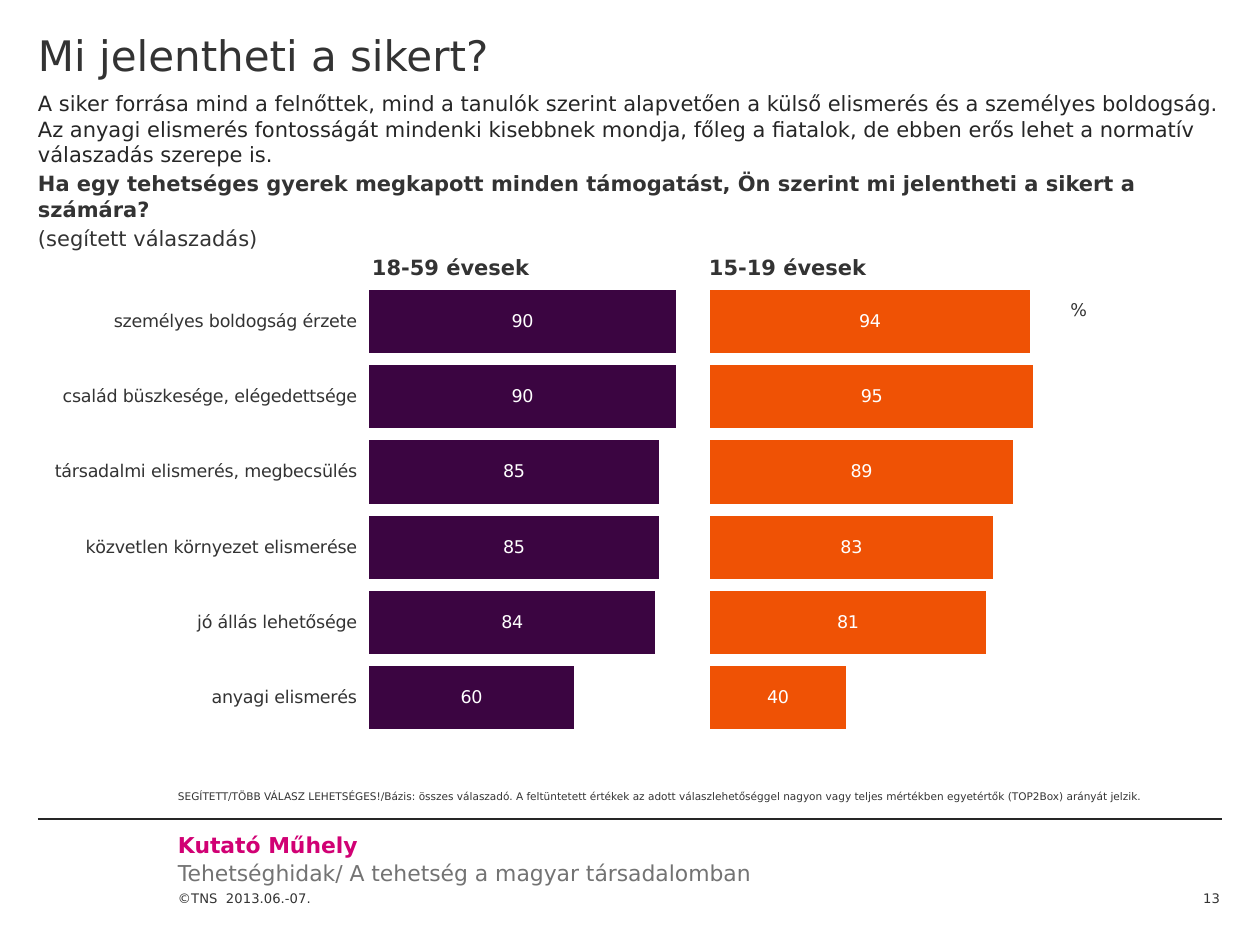
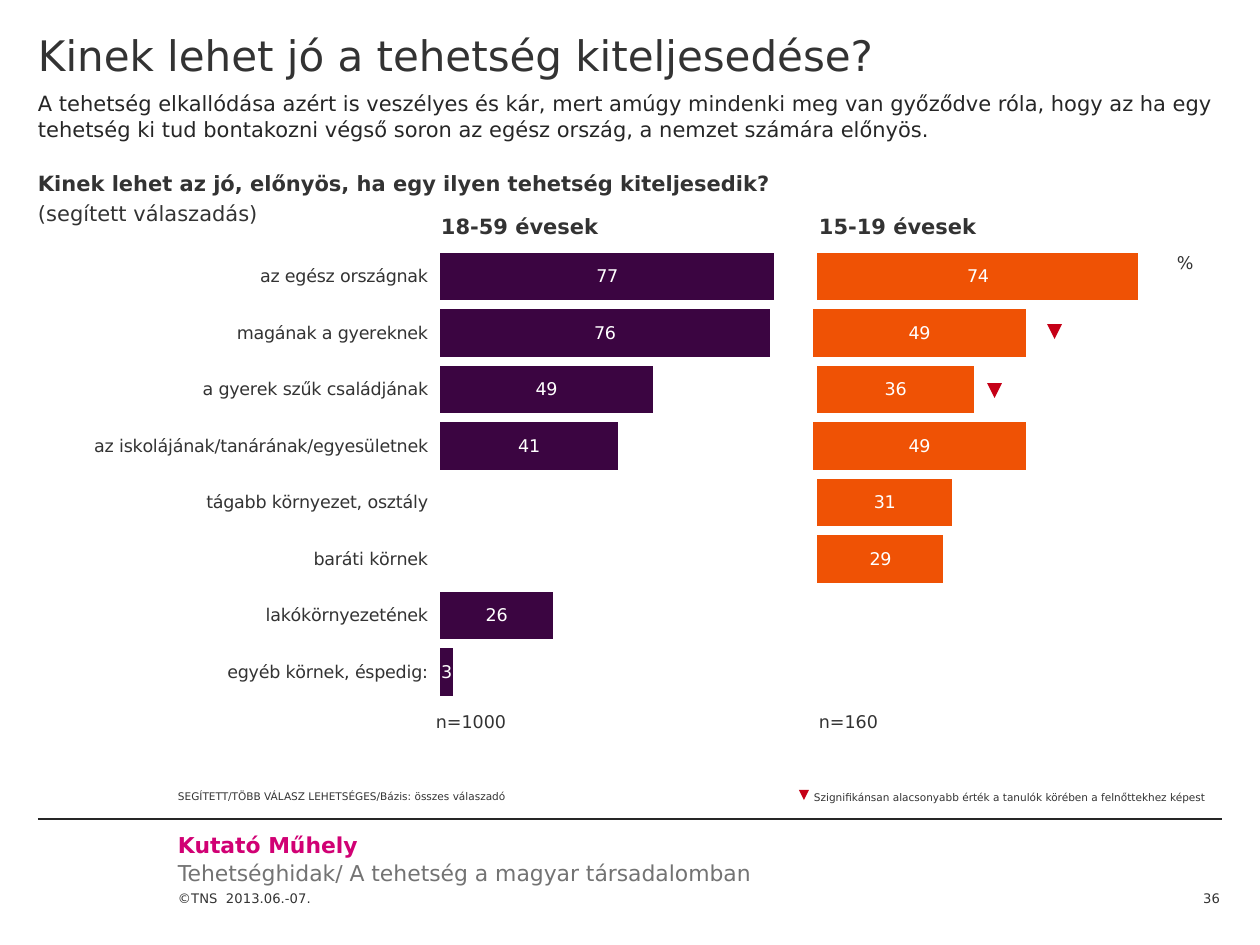
from lxml.etree import SubElement
from pptx import Presentation
from pptx.chart.data import CategoryChartData
from pptx.dml.color import RGBColor
from pptx.enum.chart import XL_CHART_TYPE, XL_LABEL_POSITION, XL_TICK_LABEL_POSITION, XL_TICK_MARK
from pptx.enum.shapes import MSO_CONNECTOR, MSO_SHAPE
from pptx.enum.text import MSO_ANCHOR, MSO_AUTO_SIZE, PP_ALIGN
from pptx.oxml import parse_xml
from pptx.oxml.ns import nsdecls, qn
from pptx.util import Emu, Pt

SCALE = 914400 / 126
FONT = "DejaVu Sans"
DARK, BLACK, GREY = "333333", "262626", "737373"
PINK, PLUM, FLAME = "D10074", "3B0541", "EF5205"
RED, WHITE = "C50017", "FFFFFF"
LEFT, INDENT, WIDTH = 38, 178, 1184
ADULTS, TEENS = "18-59 évesek", "15-19 évesek"
CHART = (LEFT, 178, 1183, 587)


def px(count):
    return Emu(round(count * SCALE))


def hue(code):
    return RGBColor.from_string(code)


def style(font, size, tone, bold=False):
    font.name = FONT
    font.size = Pt(size)
    font.bold = bold
    font.color.rgb = hue(tone)


def write(shape, text, size, tone=DARK, bold=False, low=False, align=PP_ALIGN.LEFT):
    frame = shape.text_frame
    frame.text = text
    frame.word_wrap = True
    frame.auto_size = MSO_AUTO_SIZE.NONE
    frame.vertical_anchor = MSO_ANCHOR.BOTTOM if low else MSO_ANCHOR.TOP
    frame.margin_left = frame.margin_right = frame.margin_top = frame.margin_bottom = 0
    for rank, para in enumerate(frame.paragraphs):
        para.alignment = align
        para.space_before = Pt(2.4 if rank else 0)
        for run in para.runs:
            style(run.font, size, tone, bold)
    return frame


def label(slide, box, text, size, **look):
    return write(slide.shapes.add_textbox(*map(px, box)), text, size, **look)


def hold(slide, index, box, text, size, **look):
    shape = slide.placeholders[index]
    shape.left, shape.top, shape.width, shape.height = map(px, box)
    frame = write(shape, text, size, **look)
    for para in frame.paragraphs:
        props = para._p.get_or_add_pPr()
        props.set("marL", "0")
        props.set("indent", "0")
        SubElement(props, qn("a:buNone"))
    return frame


def footer(slide, number):
    rule = slide.shapes.add_connector(
        MSO_CONNECTOR.STRAIGHT, px(LEFT), px(819), px(LEFT + WIDTH), px(819))
    rule.line.color.rgb = hue(BLACK)
    rule.line.width = Pt(0.75)
    SubElement(rule._element.spPr, qn("a:effectLst"))
    label(slide, (INDENT, 832, 650, 28), "Kutató Műhely", 12.5, tone=PINK, bold=True)
    label(slide, (INDENT, 860, 650, 28),
          "Tehetséghidak/ A tehetség a magyar társadalomban", 12.5, tone=GREY)
    label(slide, (INDENT, 886, 180, 20), "©TNS  2013.06.-07.", 7.5, low=True)
    label(slide, (1150, 886, 70, 20), number, 7.5, low=True, align=PP_ALIGN.RIGHT)


def page(deck, number, title, intro, query, note):
    slide = deck.slides.add_slide(deck.slide_layouts[3])
    hold(slide, 0, (LEFT, 29, WIDTH, 113), title, 24)
    frame = hold(slide, 1, (LEFT, 171, 1144, 80),
                 query + "\n(segített válaszadás)", 12, bold=True)
    frame.paragraphs[1].runs[0].font.bold = False
    hold(slide, 2, (INDENT, 753, 1045, 50), note, 6, low=True)
    label(slide, (LEFT, 91, WIDTH, 78), intro, 12, tone=BLACK)
    footer(slide, number)
    return slide


def place(parent, index, inner=False, **spots):
    old = parent.find(qn("c:layout"))
    if old is not None:
        parent.remove(old)
    parts = '<c:layoutTarget val="inner"/>' if inner else ""
    parts += "".join(f'<c:{key}Mode val="edge"/>' for key in "xy")
    parts += "".join(f'<c:{key} val="{spot}"/>' for key, spot in spots.items())
    parent.insert(index, parse_xml(
        f'<c:layout {nsdecls("c")}><c:manualLayout>{parts}</c:manualLayout></c:layout>'))


def bars(slide, cats, rows, top, plot, sign):
    data = CategoryChartData(number_format="0")
    data.categories = cats
    for name, vals in zip((ADULTS, "Köz", TEENS), rows):
        data.add_series(name, vals)
    chart = slide.shapes.add_chart(
        XL_CHART_TYPE.BAR_STACKED, *map(px, CHART), data).chart
    style(chart.font, 10, DARK)
    chart.has_legend = False
    chart.has_title = True
    frame = chart.chart_title.text_frame
    frame.text = "%"
    style(frame.paragraphs[0].runs[0].font, 10, DARK)
    place(chart.chart_title._element, 1, x=sign[0], y=sign[1])
    place(chart._chartSpace.chart.plotArea, 0, True,
          x=plot[0], y=plot[1], w=plot[2], h=plot[3])
    for axis in (chart.category_axis, chart.value_axis):
        axis.major_tick_mark = axis.minor_tick_mark = XL_TICK_MARK.NONE
        axis.has_major_gridlines = False
        axis.format.line.fill.background()
    chart.category_axis.reverse_order = True
    chart.category_axis.tick_label_position = XL_TICK_LABEL_POSITION.LOW
    chart.value_axis.tick_label_position = XL_TICK_LABEL_POSITION.NONE
    chart.value_axis.minimum_scale = 0
    chart.value_axis.maximum_scale = top
    body = chart.plots[0]
    body.gap_width, body.overlap, body.vary_by_categories = 19, 100, False
    for series, tone in zip(body.series, (PLUM, None, FLAME)):
        series.format.line.fill.background()
        if tone is None:
            series.format.fill.background()
            continue
        series.format.fill.solid()
        series.format.fill.fore_color.rgb = hue(tone)
        marks = series.data_labels
        marks.show_value = True
        marks.number_format = "#,##0"
        marks.number_format_is_linked = False
        marks.position = XL_LABEL_POSITION.CENTER
        style(marks.font, 10, WHITE)


def heads(slide, lefts, top):
    for left, text in zip(lefts, (ADULTS, TEENS)):
        label(slide, (left, top, 300, 30), text, 12, bold=True)


def drop(slide, left, top, side):
    mark = slide.shapes.add_shape(
        MSO_SHAPE.ISOSCELES_TRIANGLE, *map(px, (left, top, side, side)))
    mark.rotation = 180
    mark.shadow.inherit = False
    mark.fill.solid()
    mark.fill.fore_color.rgb = hue(RED)
    mark.line.fill.background()


def success(deck):
    slide = page(
        deck, "13", "Mi jelentheti a sikert?",
        "A siker forrása mind a felnőttek, mind a tanulók szerint alapvetően a külső "
        "elismerés és a személyes boldogság. Az anyagi elismerés fontosságát mindenki "
        "kisebbnek mondja, főleg a fiatalok, de ebben erős lehet a normatív válaszadás "
        "szerepe is.",
        "Ha egy tehetséges gyerek megkapott minden támogatást, Ön szerint mi jelentheti "
        "a sikert a számára?",
        "SEGÍTETT/TÖBB VÁLASZ LEHETSÉGES!/Bázis: összes válaszadó. A feltüntetett értékek "
        "az adott válaszlehetőséggel nagyon vagy teljes mértékben egyetértők (TOP2Box) "
        "arányát jelzik.")
    cats = ("személyes boldogság érzete", "család büszkesége, elégedettsége",
            "társadalmi elismerés, megbecsülés", "közvetlen környezet elismerése",
            "jó állás lehetősége", "anyagi elismerés")
    rows = ((90, 90, 85, 85, 84, 60), (10, 10, 15, 15, 16, 40), (94, 95, 89, 83, 81, 40))
    bars(slide, cats, rows, 250, (0.28, 0.18, 0.72, 0.77), (0.87, 0.2))
    heads(slide, (372, 709), 255)


def gain(deck):
    slide = page(
        deck, "36", "Kinek lehet jó a tehetség kiteljesedése?",
        "A tehetség elkallódása azért is veszélyes és kár, mert amúgy mindenki meg van "
        "győződve róla, hogy az ha egy tehetség ki tud bontakozni végső soron az egész "
        "ország, a nemzet számára előnyös.",
        "Kinek lehet az jó, előnyös, ha egy ilyen tehetség kiteljesedik?",
        "SEGÍTETT/TÖBB VÁLASZ LEHETSÉGES/Bázis: összes válaszadó")
    cats = ("az egész országnak", "magának a gyereknek", "a gyerek szűk családjának",
            "az iskolájának/tanárának/egyesületnek", "tágabb környezet, osztály",
            "baráti körnek", "lakókörnyezetének", "egyéb körnek, éspedig:")
    rows = ((77, 76, 49, 41, None, None, 26, 3), (10, 10, 38, 45, 87, 87, 60, 84),
            (74, 49, 36, 49, 31, 29, None, None))
    bars(slide, cats, rows, 180, (0.34, 0.12, 0.66, 0.77), (0.96, 0.12))
    heads(slide, (441, 819), 214)
    for left, text in ((436, "n=1000"), (819, "n=160")):
        label(slide, (left, 711, 90, 22), text, 10)
    for spot in ((1047, 324, 15), (987, 383, 15), (799, 790, 10)):
        drop(slide, *spot)
    label(slide, (814, 782, 446, 22),
          "Szignifikánsan alacsonyabb érték a tanulók körében a felnőttekhez képest",
          6, low=True)


def main():
    deck = Presentation()
    deck.slide_width, deck.slide_height = px(1260), px(945)
    success(deck)
    gain(deck)
    deck.save("out.pptx")


if __name__ == "__main__":
    main()
